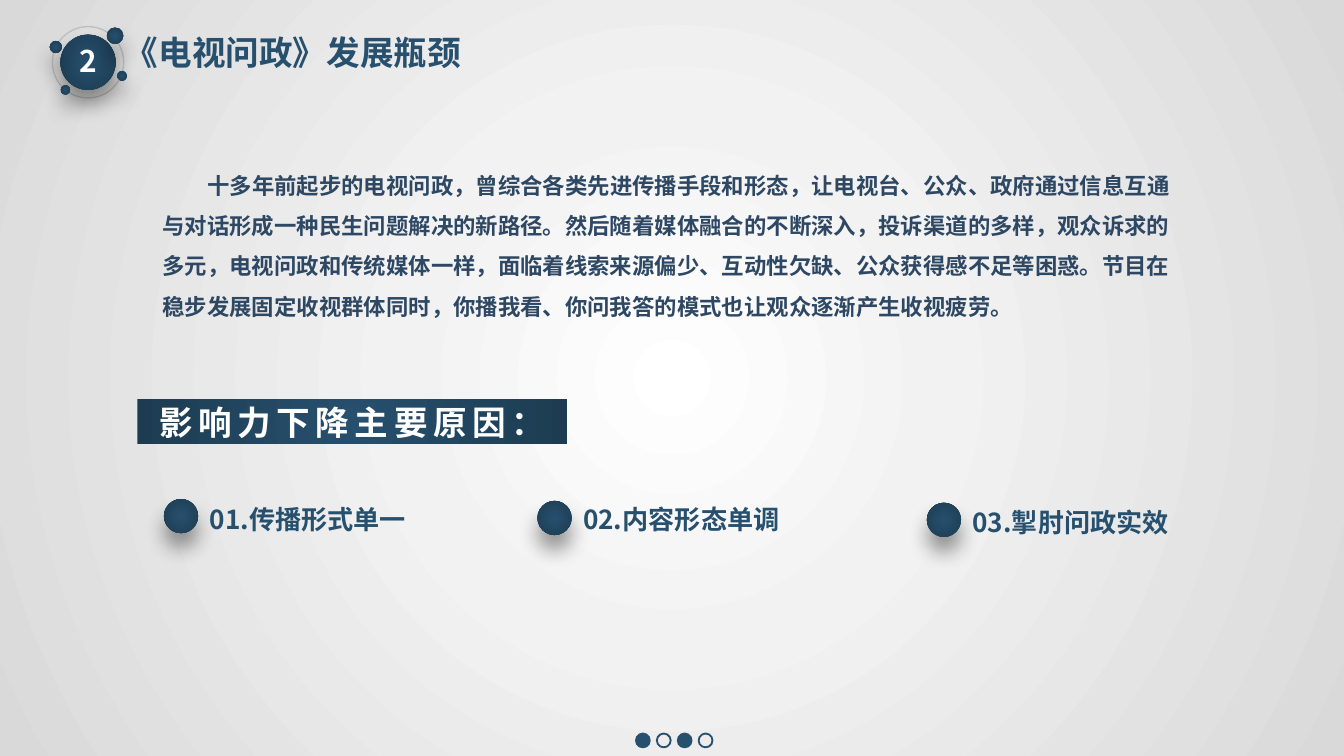
from lxml import etree
from pptx import Presentation
from pptx.dml.color import RGBColor
from pptx.enum.shapes import MSO_SHAPE as Preset
from pptx.enum.text import MSO_ANCHOR as Anchor, PP_ALIGN as Align
from pptx.oxml.ns import qn
from pptx.util import Pt

FONT = "Noto Sans CJK SC"
COLORS = {
    "navy": "27506E", "deep": "1D3C52", "body": "2E4864", "ring": "BFBFBF",
    "white": "FFFFFF", "pale": "F2F2F2", "grey": "D9D9D9", "black": "000000",
}
BACKDROP = [(0, "white"), (35, "pale"), (100, "grey")]
NAVY_GLOW = [(0, "navy"), (100, "deep")]

NUMBER = "2"
TITLE = "《电视问政》发展瓶颈"
BODY = (
    "十多年前起步的电视问政，曾综合各类先进传播手段和形态，让电视台、公众、政府通过信息互通"
    "与对话形成一种民生问题解决的新路径。然后随着媒体融合的不断深入，投诉渠道的多样，观众诉求的"
    "多元，电视问政和传统媒体一样，面临着线索来源偏少、互动性欠缺、公众获得感不足等困惑。节目在"
    "稳步发展固定收视群体同时，你播我看、你问我答的模式也让观众逐渐产生收视疲劳。"
)
HEADING = "影响力下降主要原因："
# text, bullet centre x, bullet centre y, label top
REASONS = [
    ("01.传播形式单一", 97, 276.5, 266.4),
    ("02.内容形态单调", 297.1, 277.5, 266.4),
    ("03.掣肘问政实效", 505.7, 278.5, 267.8),
]
BULLET_SIZE, LABEL_OFFSET = 18.3, 8.2

# centre x, centre y, diameter
BADGE_RING = (47.2, 33.4, 38.2)
BADGE_DISCS = [
    (47.2, 33.4, 29.6), (61.7, 19.2, 8.8), (29.9, 25.2, 6.5),
    (35.1, 48.2, 5), (65.4, 40.7, 5.2),
]
PAGER_FILLED = [True, False, True, False]
PAGER_X, PAGER_Y, PAGER_STEP, PAGER_SIZE = 344.4, 396.7, 11.2, 7.4


def rgb(name):
    return RGBColor.from_string(COLORS[name])


def add_color(parent, name):
    return etree.SubElement(parent, qn("a:srgbClr"), val=COLORS[name])


def fill_radially(fill, properties, stops):
    """Replace the fill held in properties by a gradient from the centre out."""
    fill.solid()
    gradient = etree.Element(qn("a:gradFill"), rotWithShape="1")
    stop_list = etree.SubElement(gradient, qn("a:gsLst"))
    for percent, color in stops:
        stop = etree.SubElement(stop_list, qn("a:gs"), pos=str(percent * 1000))
        add_color(stop, color)
    circle = etree.SubElement(gradient, qn("a:path"), path="circle")
    etree.SubElement(circle, qn("a:fillToRect"),
                     dict.fromkeys("ltrb", "50000"))
    properties.replace(properties.find(qn("a:solidFill")), gradient)


def add_plain_shape(slide, preset, left, top, width, height):
    shape = slide.shapes.add_shape(preset, Pt(left), Pt(top), Pt(width), Pt(height))
    shape.shadow.inherit = False
    shape.fill.background()
    shape.line.fill.background()
    return shape


def add_circle(slide, x, y, size):
    return add_plain_shape(slide, Preset.OVAL, x - size / 2, y - size / 2, size, size)


def outline(shape, color, width):
    shape.line.color.rgb = rgb(color)
    shape.line.width = Pt(width)


def add_disc(slide, x, y, size):
    """Add a navy circle with a soft shadow below it."""
    disc = add_circle(slide, x, y, size)
    properties = disc._element.spPr
    fill_radially(disc.fill, properties, NAVY_GLOW)
    shadow = etree.SubElement(
        properties.find(qn("a:effectLst")), qn("a:outerShdw"),
        blurRad=str(Pt(11)), dist=str(Pt(8)), dir=str(90 * 60000),
        algn="t", rotWithShape="0")
    etree.SubElement(add_color(shadow, "black"), qn("a:alpha"), val="40000")


def write(shape, text, size, color, wrap=True):
    """Put bold text into the shape and return its paragraph."""
    frame = shape.text_frame
    frame.text = text
    frame.word_wrap = wrap
    paragraph = frame.paragraphs[0]
    font = paragraph.runs[0].font
    font.size, font.bold, font.name = Pt(size), True, FONT
    font.color.rgb = rgb(color)
    etree.SubElement(font._element, qn("a:ea"), typeface=FONT)
    return paragraph


def add_text(slide, box, text, size, color, wrap=True):
    shape = slide.shapes.add_textbox(*map(Pt, box))
    return write(shape, text, size, color, wrap)


def add_badge(slide):
    outline(add_circle(slide, *BADGE_RING), "ring", 0.75)
    for disc in BADGE_DISCS:
        add_disc(slide, *disc)
    add_text(slide, (35.3, 19.4, 24.5, 26.6), NUMBER, 16, "white", wrap=False)


def add_pager(slide):
    for index, filled in enumerate(PAGER_FILLED):
        dot = add_circle(slide, PAGER_X + index * PAGER_STEP, PAGER_Y, PAGER_SIZE)
        outline(dot, "navy", 1)
        if filled:
            dot.fill.solid()
            dot.fill.fore_color.rgb = rgb("navy")


def add_body(slide):
    paragraph = add_text(slide, (80, 81.4, 560, 92), BODY, 12, "body")
    paragraph.line_spacing = 1.5
    paragraph._p.get_or_add_pPr().set("indent", str(Pt(24)))


def add_heading(slide):
    bar = add_plain_shape(slide, Preset.RECTANGLE, 73.6, 213.9, 230.2, 23.9)
    fill_radially(bar.fill, bar._element.spPr, NAVY_GLOW)
    paragraph = write(bar, HEADING, 18, "white")
    paragraph.alignment = Align.CENTER
    paragraph.runs[0].font._element.set("spc", "300")
    bar.text_frame.vertical_anchor = Anchor.MIDDLE


def add_reasons(slide):
    for text, x, y, top in REASONS:
        add_disc(slide, x, y, BULLET_SIZE)
        add_text(slide, (x + LABEL_OFFSET, top, 121, 24.5), text, 14, "navy")


def main():
    presentation = Presentation()
    presentation.slide_width, presentation.slide_height = Pt(720), Pt(405)
    slide = presentation.slides.add_slide(presentation.slide_layouts[6])
    background = slide.background.fill
    background.solid()
    fill_radially(background, slide._element.cSld.bg.bgPr, BACKDROP)
    add_badge(slide)
    add_pager(slide)
    add_text(slide, (59.8, 13.7, 196.6, 28.8), TITLE, 18, "navy", wrap=False)
    add_body(slide)
    add_heading(slide)
    add_reasons(slide)
    presentation.save("out.pptx")


if __name__ == "__main__":
    main()
